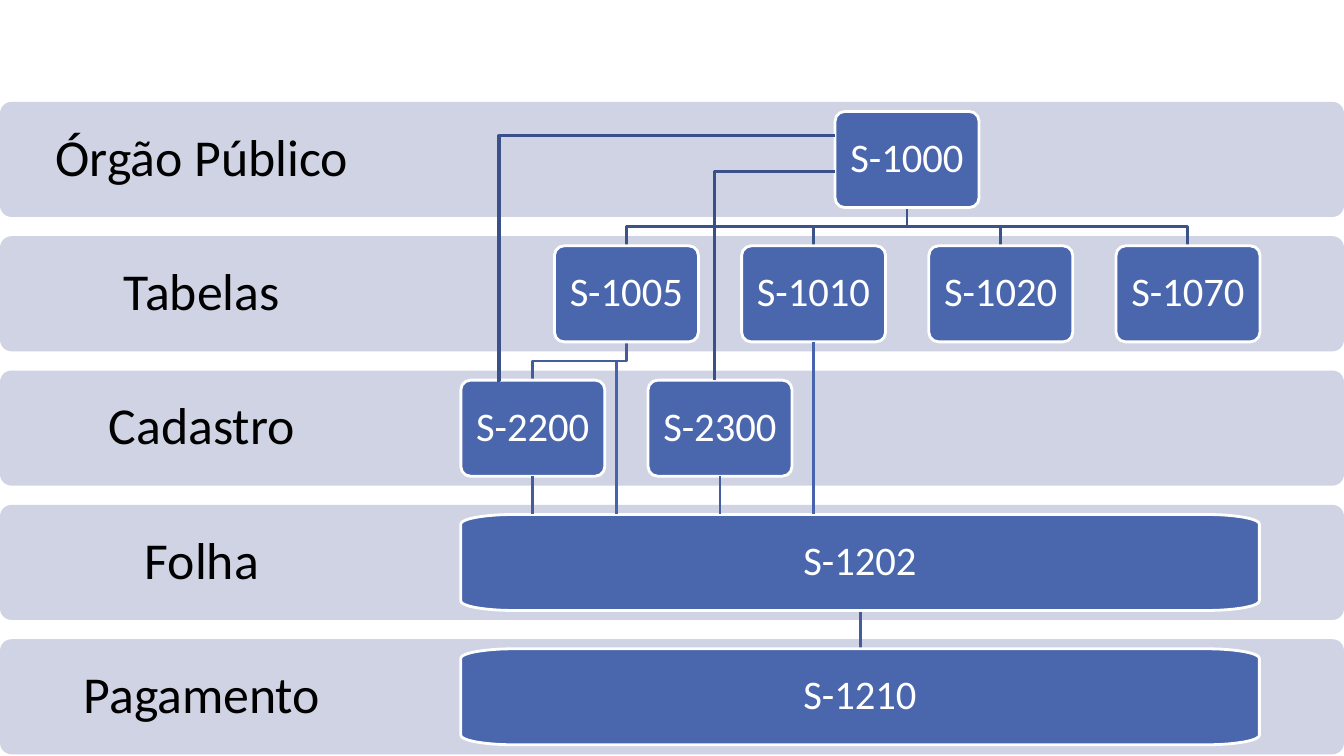
from math import cos, pi, sin

from lxml import etree
from pptx import Presentation
from pptx.dml.color import RGBColor
from pptx.enum import shapes as kinds, text as txt
from pptx.oxml import ns
from pptx.util import Pt

HEX = {"band": "D0D3E3", "box": "4A66AC", "white": "FFFFFF", "black": "000000",
       "tree": "3B528A", "flow": "435D9C", "link": "4663AB", "bent": "395088"}
ROWS = ["Órgão Público", "Tabelas", "Cadastro", "Folha", "Pagamento"]
WIDE = 960
TOP, STEP, BAND = 72.8, 95.95, 82.2
LEFT, PITCH = 329.2, 66.85
BOX_W, BOX_H, PAD = 102.8, 68.6, 6.85
FULL = 570.4


def color(name):
    return RGBColor.from_string(HEX[name])


def cell(row, half, width=BOX_W):
    return LEFT + half * PITCH, TOP + row * STEP + PAD, width, BOX_H


def write(shape, words, size, ink, sides):
    frame = shape.text_frame
    frame.word_wrap = True
    frame.vertical_anchor = txt.MSO_ANCHOR.MIDDLE
    frame.margin_left, frame.margin_right = map(Pt, sides)
    frame.margin_top = frame.margin_bottom = Pt(10)
    frame.text = words
    para = frame.paragraphs[0]
    para.alignment = txt.PP_ALIGN.CENTER
    para.line_spacing = 0.9
    font = para.runs[0].font
    font.size, font.name = Pt(size), "Calibri"
    font.color.rgb = color(ink)


def paint(shape, fill, line=None):
    shape.shadow.inherit = False
    if fill:
        shape.fill.solid()
        shape.fill.fore_color.rgb = color(fill)
    else:
        shape.fill.background()
    if line:
        shape.line.color.rgb = color(line)
        shape.line.width = Pt(2)
    else:
        shape.line.fill.background()


def outline(slide, points, close):
    dots = [(Pt(x), Pt(y)) for x, y in points]
    pen = slide.shapes.build_freeform(*dots[0], scale=1.0)
    pen.add_line_segments(dots[1:], close=close)
    return pen.convert_to_shape()


def block(slide, box):
    shape = slide.shapes.add_shape(
        kinds.MSO_SHAPE.ROUNDED_RECTANGLE, *map(Pt, box))
    shape.adjustments[0] = 0.1
    return shape


def band(slide, box, words):
    shape = block(slide, box)
    paint(shape, "band")
    write(shape, words, 37, "black", (21, 692.6))


def event(slide, box, words):
    shape = block(slide, box)
    paint(shape, "box", "white")
    write(shape, words, 29, "white", (7, 7))
    return shape


def barrel(slide, box, words):
    x, y, w, h = box
    rx, ry = 38, 6.86
    spots = [(x + w - rx, y + ry), (x + w - rx, y + h - ry),
             (x + rx, y + h - ry), (x + rx, y + ry)]
    points = []
    for turn, (cx, cy) in enumerate(spots):
        for part in range(13):
            angle = (turn - 1 + part / 12) * pi / 2
            points.append((cx + rx * cos(angle), cy + ry * sin(angle)))
    shape = outline(slide, points, True)
    paint(shape, "box", "white")
    write(shape, words, 29, "white", (11, 11))


def branch(slide, start, end, ink):
    x, y, w, h = start
    a, b, c = x + w / 2, y + h, end[0] + end[2] / 2
    mid = (b + end[1]) / 2
    shape = outline(slide, [(a, b), (a, mid), (c, mid), (c, end[1])], False)
    paint(shape, None, ink)


def link(slide, start, end, ink, width=2.25, source=None, bend=None):
    kind = kinds.MSO_CONNECTOR.ELBOW if bend else kinds.MSO_CONNECTOR.STRAIGHT
    line = slide.shapes.add_connector(kind, *map(Pt, start + end))
    if source is not None:
        line.begin_connect(source, 2)
    line.line.color.rgb = color(ink)
    line.line.width = Pt(width)
    props = line._element.spPr
    etree.SubElement(props, ns.qn("a:effectLst"))
    if bend:
        guides = props.find(".//" + ns.qn("a:avLst"))
        etree.SubElement(guides, ns.qn("a:gd"), name="adj1", fmla=f"val {bend}")


def chart(slide):
    for row, words in enumerate(ROWS):
        band(slide, (0, TOP + row * STEP, WIDE, BAND), words)

    root = cell(0, 4)
    root = (596.5,) + root[1:]
    tables = {name: cell(1, 1 + 2 * i) for i, name in
              enumerate(["S-1005", "S-1010", "S-1020", "S-1070"])}
    staff = {"S-2200": cell(2, 0), "S-2300": cell(2, 2)}
    for box in tables.values():
        branch(slide, root, box, "tree")
    branch(slide, tables["S-1005"], staff["S-2200"], "flow")

    pay, paid = cell(3, 0, FULL), cell(4, 0, FULL)
    mid = LEFT + FULL / 2
    link(slide, (mid, pay[1] + BOX_H), (mid, paid[1]), "flow", 2)

    cells = {"S-1000": root, **tables, **staff}
    made = {name: event(slide, box, name) for name, box in cells.items()}
    barrel(slide, pay, "S-1202")
    barrel(slide, paid, "S-1210")

    for name, ink, width in [("S-2200", "flow", 2), ("S-2300", "flow", 2),
                             ("S-1010", "link", 2.25)]:
        x, y, w, h = cells[name]
        link(slide, (x + w / 2, y + h), (x + w / 2, pay[1]), ink, width,
             made[name])
    link(slide, (440.6, 258.5), (440.6, pay[1]), "link")
    for y, x, bend in [(122.4, 510.5, 100000), (97, 355, 99400)]:
        link(slide, (root[0], y), (x, staff["S-2200"][1]), "bent", bend=bend)


def main():
    deck = Presentation()
    deck.slide_width, deck.slide_height = Pt(WIDE), Pt(540)
    chart(deck.slides.add_slide(deck.slide_layouts[6]))
    deck.save("out.pptx")


if __name__ == "__main__":
    main()
